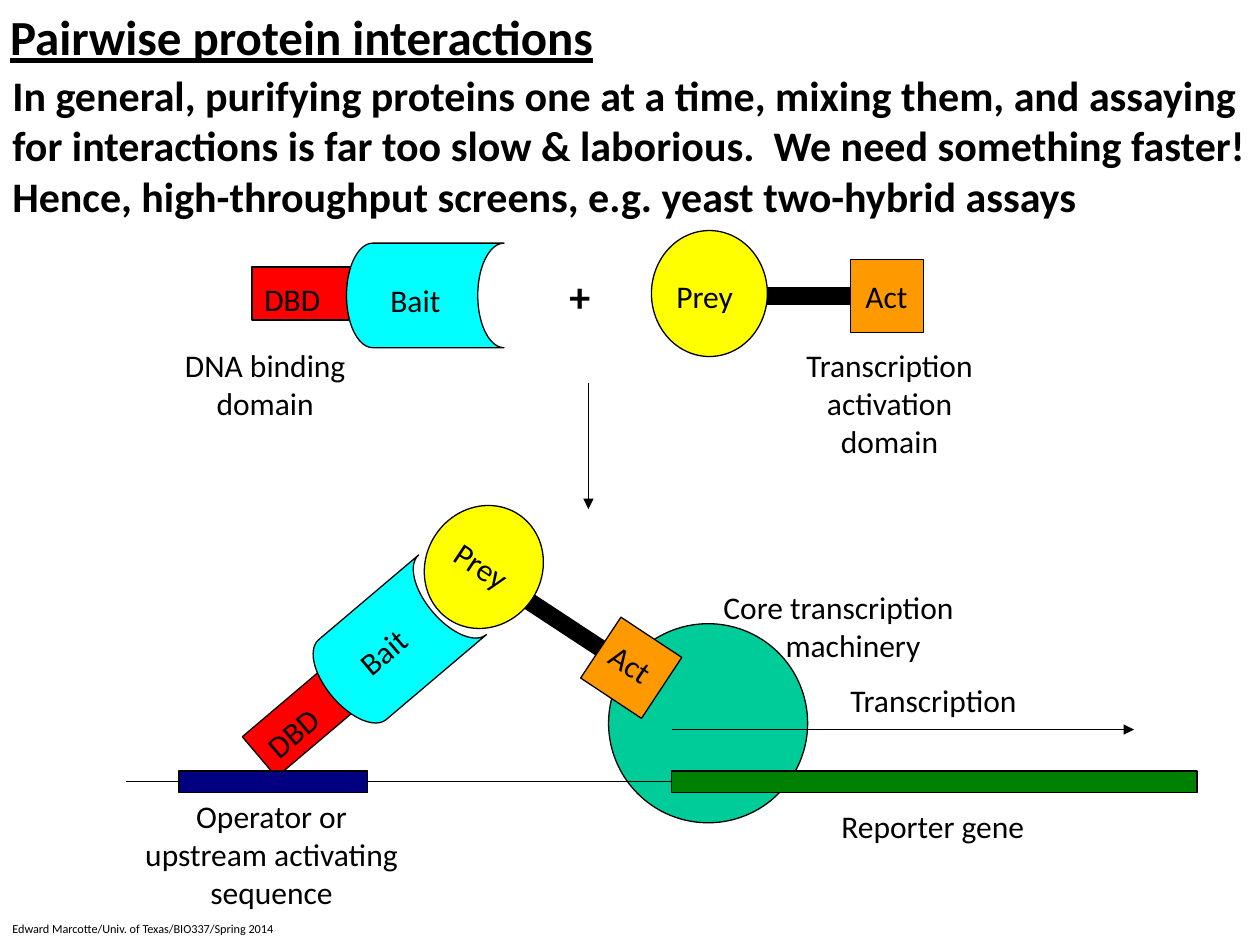
"""Build a slide explaining pairwise protein interactions and the yeast two-hybrid assay."""
from dataclasses import dataclass

from lxml.etree import SubElement
from pptx import Presentation
from pptx.dml.color import RGBColor
from pptx.enum.shapes import MSO_CONNECTOR, MSO_SHAPE
from pptx.enum.text import MSO_ANCHOR, MSO_AUTO_SIZE, PP_ALIGN
from pptx.oxml.ns import qn
from pptx.util import Inches, Pt


@dataclass(frozen=True)
class Theme:
    font: str = "Calibri"
    ink: str = "000000"
    title: int = 28
    lead: int = 24
    label: int = 18
    footer: int = 7
    thin: float = 0.75
    rod: int = 10


THEME = Theme()
BAIT_TILT, PREY_TILT = 319.7, 33.5

TITLE = "Pairwise protein interactions"
LEAD = (
    "In general, purifying proteins one at a time, mixing them, and assaying "
    "for interactions is far too slow & laborious.  We need something faster! "
    "Hence, high-throughput screens, e.g. yeast two-hybrid assays"
)
FOOTER = "Edward Marcotte/Univ. of Texas/BIO337/Spring 2014"

PARTS = {
    "DBD": (MSO_SHAPE.RECTANGLE, 0.92, 0.42, "FF0000"),
    "Bait": (MSO_SHAPE.FLOWCHART_STORED_DATA, 1.25, 0.83, "00FFFF"),
    "Prey": (MSO_SHAPE.OVAL, 0.92, 1, "FFFF00"),
    "Act": (MSO_SHAPE.RECTANGLE, 0.58, 0.58, "FF9900"),
    "Core": (MSO_SHAPE.OVAL, 1.58, 1.58, "00CC99"),
    "Operator": (MSO_SHAPE.RECTANGLE, 1.5, 0.17, "000080"),
    "Reporter": (MSO_SHAPE.RECTANGLE, 4.17, 0.17, "008000"),
}
LINES = {
    "free rod": ((6.05, 2.35), (6.89, 2.35), THEME.rod, False),
    "bound rod": ((4.18, 4.76), (4.88, 5.22), THEME.rod, False),
    "next step": ((4.67, 3.04), (4.67, 4.04), THEME.thin, True),
    "DNA": ((1, 6.2), (9.33, 6.2), THEME.thin, False),
    "transcription": ((5.33, 5.79), (9, 5.79), THEME.thin, True),
}
DRAWING_ORDER = [
    ("DBD", 1.95, 5.5, BAIT_TILT),
    ("Bait", 2.49, 4.71, BAIT_TILT),
    ("Core", 4.83, 4.95, 0),
    "free rod",
    ("DBD", 2, 2.12, 0),
    ("Prey", 5.17, 1.83, 0),
    ("Bait", 2.75, 1.93, 0),
    ("Act", 6.75, 2.06, 0),
    "next step",
    "DNA",
    ("Operator", 1.42, 6.12, 0),
    ("Reporter", 5.33, 6.12, 0),
    "transcription",
    "bound rod",
    ("Prey", 3.38, 4, PREY_TILT),
    ("Act", 4.72, 5.01, PREY_TILT),
]
PART_LABELS = [
    ("DBD", 2, 2.17, 0.65, 0),
    ("Bait", 3, 2.18, 0.6, 0),
    ("Prey", 5.27, 2.15, 0.65, 0),
    ("Act", 6.77, 2.15, 0.54, 0),
    ("DBD", 2, 5.61, 0.65, BAIT_TILT),
    ("Bait", 2.74, 4.97, 0.6, BAIT_TILT),
    ("Prey", 3.5, 4.29, 0.65, PREY_TILT),
    ("Act", 4.74, 5.07, 0.54, PREY_TILT),
    ("Reporter gene", 6.58, 6.36, 1.67, 0),
    ("Transcription", 6.65, 5.36, 1.54, 0),
]
CAPTIONS = [
    (["DNA binding", "domain"], 1.36, 2.7, 1.49, 0.71),
    (["Transcription", "activation", "domain"], 6.29, 2.7, 1.54, 1.01),
    (["Operator or", "upstream activating", "sequence"], 1.04, 6.28, 2.23, 1.01),
    (["Core transcription", "machinery"], 5.63, 4.62, 2.05, 0.71),
]
CAPTION_INDENTS = {"machinery": 0.23}


def place(shape, left, top, width, height):
    shape.left, shape.top = Inches(left), Inches(top)
    shape.width, shape.height = Inches(width), Inches(height)


def write(box, lines, size, bold=False, underline=False, align=PP_ALIGN.LEFT, wrap=False):
    frame = box.text_frame
    frame.auto_size = MSO_AUTO_SIZE.NONE
    frame.word_wrap = wrap
    frame.vertical_anchor = MSO_ANCHOR.TOP
    for number, line in enumerate(lines):
        para = frame.add_paragraph() if number else frame.paragraphs[0]
        para.alignment = align
        para.space_before = Pt(0)
        if line in CAPTION_INDENTS:
            para._p.get_or_add_pPr().set("marL", str(Inches(CAPTION_INDENTS[line])))
        span = para.add_run()
        span.text = line
        span.font.name = THEME.font
        span.font.size = Pt(size)
        span.font.bold = bold
        span.font.underline = underline
        span.font.color.rgb = RGBColor.from_string(THEME.ink)


def add_text(page, lines, left, top, width, height, size=THEME.label, tilt=0, **style):
    box = page.shapes.add_textbox(*map(Inches, (left, top, width, height)))
    box.rotation = tilt
    write(box, lines, size, **style)


def add_part(page, name, left, top, tilt):
    preset, width, height, color = PARTS[name]
    shape = page.shapes.add_shape(preset, *map(Inches, (left, top, width, height)))
    shape.rotation = tilt
    shape.shadow.inherit = False
    shape.fill.solid()
    shape.fill.fore_color.rgb = RGBColor.from_string(color)
    shape.line.color.rgb = RGBColor.from_string(THEME.ink)
    shape.line.width = Pt(THEME.thin)


def add_line(page, start, end, weight, arrow):
    line = page.shapes.add_connector(MSO_CONNECTOR.STRAIGHT, *map(Inches, (*start, *end)))
    line.line.color.rgb = RGBColor.from_string(THEME.ink)
    line.line.width = Pt(weight)
    if arrow:
        SubElement(line.line._get_or_add_ln(), qn("a:tailEnd"), type="triangle")
    SubElement(line._element.spPr, qn("a:effectLst"))


def main():
    deck = Presentation()
    deck.slide_width, deck.slide_height = Inches(10), Inches(7.5)
    page = deck.slides.add_slide(deck.slide_layouts[5])

    title = page.shapes.title
    place(title, -0.02, 0, 8.77, 0.57)
    write(title, [TITLE], THEME.title, bold=True, underline=True, wrap=True)
    add_text(page, [LEAD], 0, 0.5, 10, 1.31, THEME.lead, bold=True, wrap=True)

    for item in DRAWING_ORDER:
        if item in LINES:
            add_line(page, *LINES[item])
        else:
            add_part(page, *item)

    for label, left, top, width, tilt in PART_LABELS:
        add_text(page, [label], left, top, width, 0.4, tilt=tilt)
    for lines, *position in CAPTIONS:
        add_text(page, lines, *position, align=PP_ALIGN.CENTER)
    add_text(page, ["+"], 4.42, 2.1, 0.37, 0.5, THEME.lead, bold=True)
    add_text(page, [FOOTER], 0, 7.26, 2.34, 0.22, THEME.footer)

    deck.save("out.pptx")


if __name__ == "__main__":
    main()
